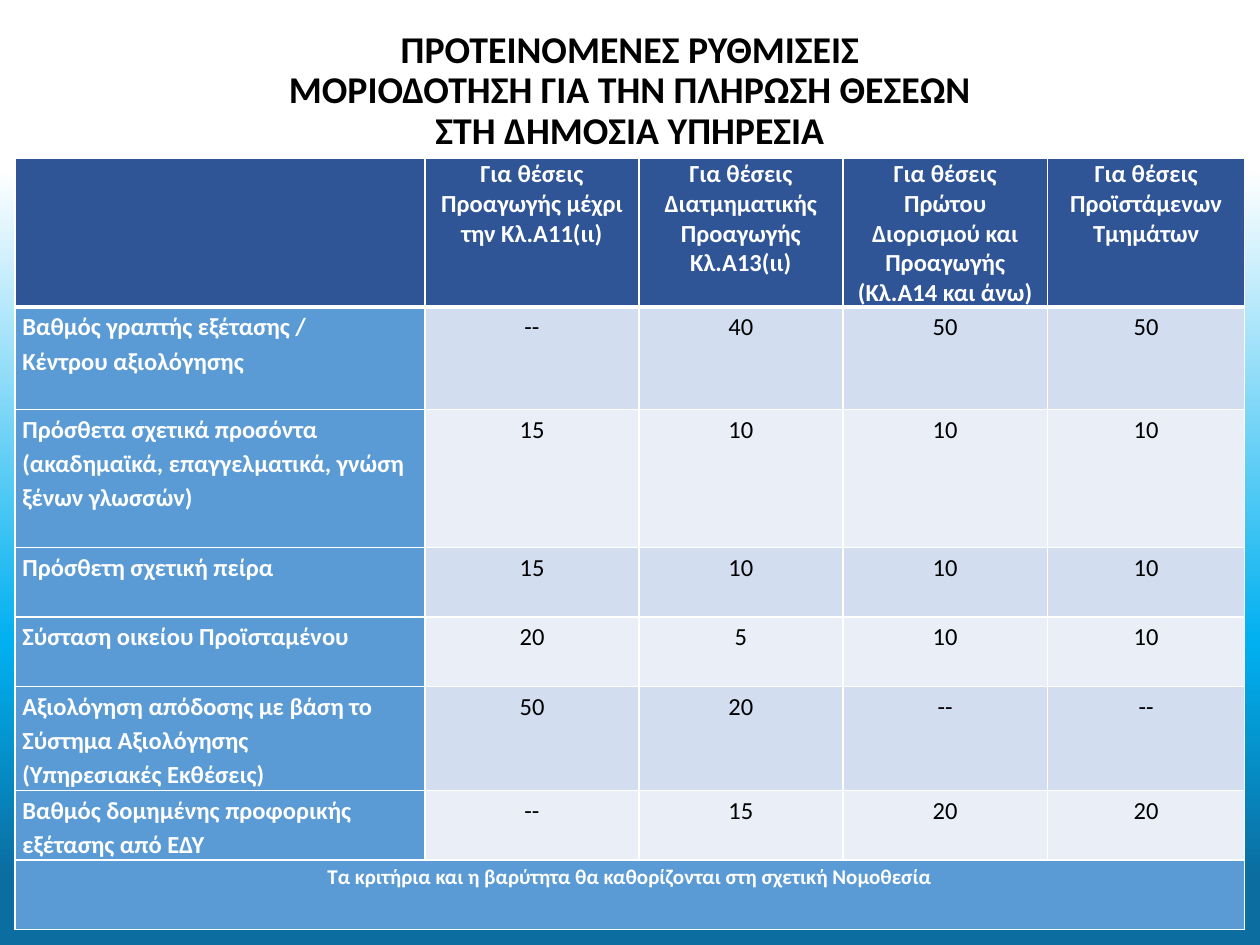
from dataclasses import dataclass
from typing import Optional

from lxml.etree import SubElement
from pptx import Presentation
from pptx.dml.color import RGBColor
from pptx.enum.text import MSO_ANCHOR, PP_ALIGN
from pptx.oxml import parse_xml
from pptx.oxml.ns import nsdecls, qn
from pptx.util import Cm, Pt


@dataclass(frozen=True)
class Theme:
    font: str = "Calibri"
    black: str = "000000"
    white: str = "FFFFFF"
    header: str = "2F5597"
    label: str = "5B9BD5"
    bands: tuple = ("D2DEEF", "EAEFF7")
    backdrop: tuple = ((18, "FFFFFF"), (68, "00B0F0"), (93, "0B6DA0"))
    title_size: float = 21.6
    body_size: float = 14
    note_size: float = 12
    rule: float = 1
    header_rule: float = 3


@dataclass(frozen=True)
class TextStyle:
    size: float
    color: str
    bold: bool = True
    align: PP_ALIGN = PP_ALIGN.CENTER
    spacing: Optional[float] = None
    after: float = 0


@dataclass(frozen=True)
class Criterion:
    label: str
    points: tuple
    height: float


THEME = Theme()
TITLE = TextStyle(THEME.title_size, THEME.black, spacing=0.9)
HEADING = TextStyle(THEME.body_size, THEME.white, after=10)
LABEL = TextStyle(THEME.body_size, THEME.white, align=PP_ALIGN.LEFT, spacing=1.15)
POINTS = TextStyle(THEME.body_size, THEME.black, bold=False, spacing=1.15, after=10)
NOTE = TextStyle(THEME.note_size, THEME.white, spacing=1.15, after=10)

TITLE_LINES = (
    "ΠΡΟΤΕΙΝΟΜΕΝΕΣ ΡΥΘΜΙΣΕΙΣ\n"
    "ΜΟΡΙΟΔΟΤΗΣΗ ΓΙΑ ΤΗΝ ΠΛΗΡΩΣΗ ΘΕΣΕΩΝ\n"
    "ΣΤΗ ΔΗΜΟΣΙΑ ΥΠΗΡΕΣΙΑ"
)
HEADINGS = (
    "",
    "Για θέσεις Προαγωγής μέχρι την Κλ.Α11(ιι)",
    "Για θέσεις Διατμηματικής Προαγωγής Κλ.Α13(ιι)",
    "Για θέσεις Πρώτου Διορισμού και Προαγωγής\n(Κλ.Α14 και άνω)",
    "Για θέσεις Προϊστάμενων Τμημάτων",
)
CRITERIA = (
    Criterion("Βαθμός γραπτής εξέτασης /\nΚέντρου αξιολόγησης", ("--", "40", "50", "50"), 2.06),
    Criterion(
        "Πρόσθετα σχετικά προσόντα (ακαδημαϊκά, επαγγελματικά, γνώση ξένων γλωσσών)",
        ("15", "10", "10", "10"),
        2.79,
    ),
    Criterion("Πρόσθετη σχετική πείρα", ("15", "10", "10", "10"), 1.4),
    Criterion("Σύσταση οικείου Προϊσταμένου", ("20", "5", "10", "10"), 1.4),
    Criterion(
        "Αξιολόγηση απόδοσης με βάση το Σύστημα Αξιολόγησης\n(Υπηρεσιακές Εκθέσεις)",
        ("50", "20", "--", "--"),
        2.1,
    ),
    Criterion("Βαθμός δομημένης προφορικής εξέτασης από ΕΔΥ", ("--", "15", "20", "20"), 1.4),
)
FOOTNOTE = "Τα κριτήρια και η βαρύτητα θα καθορίζονται στη σχετική Νομοθεσία"
COLUMN_WIDTHS = (8.27, 4.31, 4.11, 4.13, 3.97)
HEADER_HEIGHT = 3.0
FOOTNOTE_HEIGHT = 1.4


def write(frame, text: str, style: TextStyle) -> None:
    paragraph = frame.paragraphs[0]
    paragraph.alignment = style.align
    paragraph.space_after = Pt(style.after)
    if style.spacing:
        paragraph.line_spacing = style.spacing
    for index, line in enumerate(text.split("\n")):
        if index:
            paragraph.add_line_break()
        run = paragraph.add_run()
        run.text = line
        run.font.name = THEME.font
        run.font.size = Pt(style.size)
        run.font.bold = style.bold
        run.font.color.rgb = RGBColor.from_string(style.color)


def paint_background(slide) -> None:
    stops = "".join(
        f'<a:gs pos="{position * 1000}"><a:srgbClr val="{color}"/></a:gs>'
        for position, color in THEME.backdrop
    )
    slide.element.cSld.insert(0, parse_xml(
        f'<p:bg {nsdecls("p", "a")}><p:bgPr><a:gradFill rotWithShape="1">'
        f'<a:gsLst>{stops}</a:gsLst><a:lin ang="5400000" scaled="0"/>'
        "</a:gradFill><a:effectLst/></p:bgPr></p:bg>"
    ))


def add_title(slide) -> None:
    title = slide.shapes.add_textbox(Cm(1.75), Cm(0.65), Cm(21.9), Cm(2.4)).text_frame
    title.word_wrap = True
    title.vertical_anchor = MSO_ANCHOR.MIDDLE
    title.margin_top = title.margin_bottom = 0
    write(title, TITLE_LINES, TITLE)


def set_border(cell, side: str, width: float) -> None:
    line = SubElement(cell._tc.get_or_add_tcPr(), qn(f"a:{side}"), w=str(Pt(width)))
    fill = SubElement(line, qn("a:solidFill"))
    SubElement(fill, qn("a:srgbClr"), val=THEME.white)


def fill_cell(cell, text: str, fill: str, style: TextStyle,
              top: float = THEME.rule, bottom: float = THEME.rule) -> None:
    cell.margin_left = cell.margin_right = Cm(0.15)
    cell.margin_top = Cm(0.02)
    cell.margin_bottom = 0
    for side, width in (("lnL", THEME.rule), ("lnR", THEME.rule), ("lnT", top), ("lnB", bottom)):
        set_border(cell, side, width)
    cell.fill.solid()
    cell.fill.fore_color.rgb = RGBColor.from_string(fill)
    if text:
        write(cell.text_frame, text, style)


def add_points_table(slide) -> None:
    heights = (HEADER_HEIGHT, *(c.height for c in CRITERIA), FOOTNOTE_HEIGHT)
    table = slide.shapes.add_table(
        len(heights), len(COLUMN_WIDTHS), Cm(0.3), Cm(3.19),
        Cm(sum(COLUMN_WIDTHS)), Cm(sum(heights)),
    ).table
    table.horz_banding = False
    for column, width in zip(table.columns, COLUMN_WIDTHS):
        column.width = Cm(width)
    for row, height in zip(table.rows, heights):
        row.height = Cm(height)

    for column, heading in enumerate(HEADINGS):
        fill_cell(table.cell(0, column), heading, THEME.header, HEADING, bottom=THEME.header_rule)
    for row, criterion in enumerate(CRITERIA, start=1):
        top = THEME.header_rule if row == 1 else THEME.rule
        fill_cell(table.cell(row, 0), criterion.label, THEME.label, LABEL, top)
        band = THEME.bands[(row - 1) % 2]
        for column, points in enumerate(criterion.points, start=1):
            fill_cell(table.cell(row, column), points, band, POINTS, top)

    last_row, last_column = len(heights) - 1, len(COLUMN_WIDTHS) - 1
    table.cell(last_row, 0).merge(table.cell(last_row, last_column))
    for column in range(last_column + 1):
        fill_cell(table.cell(last_row, column), "" if column else FOOTNOTE, THEME.label, NOTE)


def main() -> None:
    presentation = Presentation()
    presentation.slide_width, presentation.slide_height = Cm(25.4), Cm(19.05)
    slide = presentation.slides.add_slide(presentation.slide_layouts[6])
    paint_background(slide)
    add_title(slide)
    add_points_table(slide)
    presentation.save("out.pptx")


if __name__ == "__main__":
    main()
